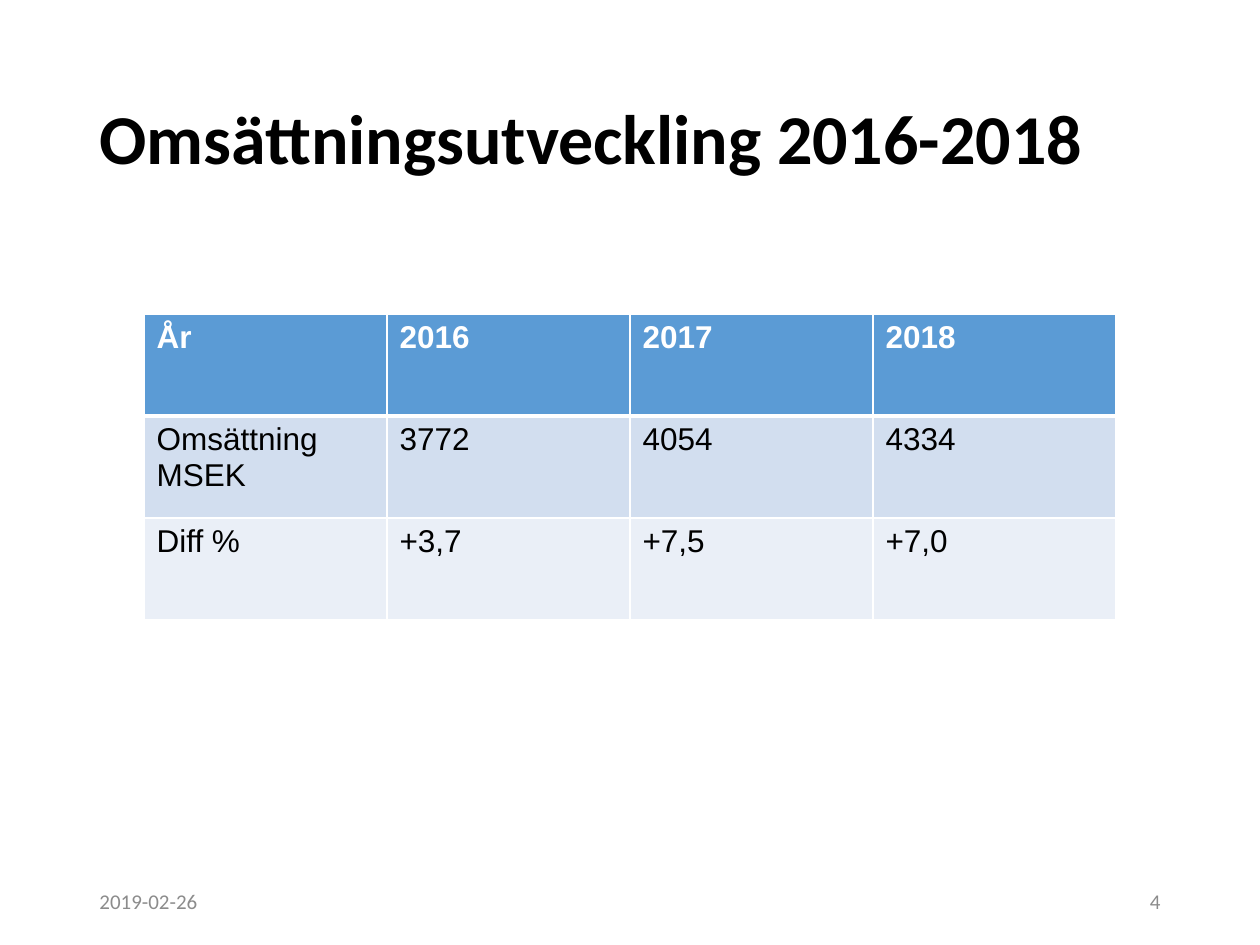
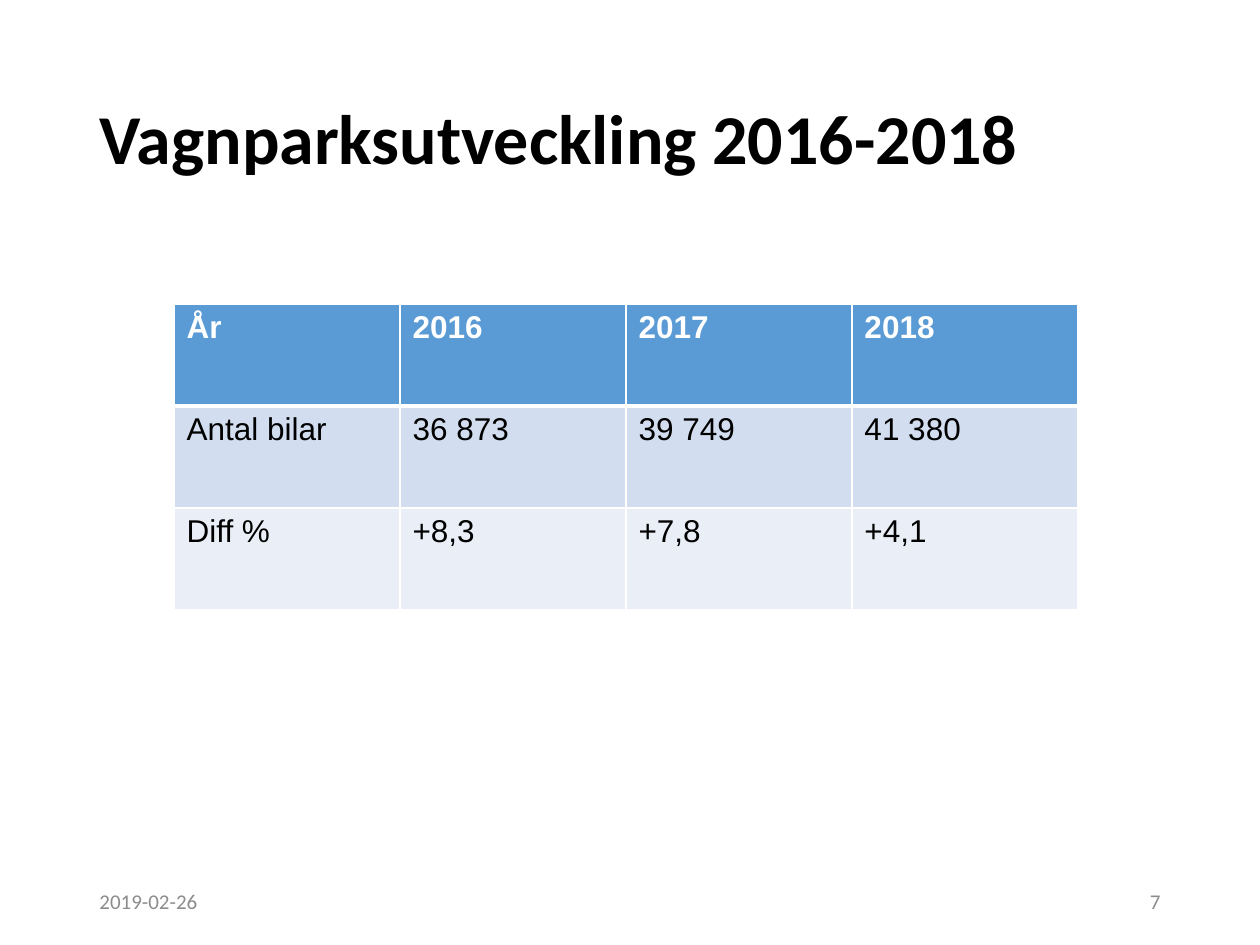
from lxml.etree import SubElement
from pptx import Presentation
from pptx.dml.color import RGBColor
from pptx.enum.text import MSO_ANCHOR as Anchor, PP_ALIGN as Align
from pptx.oxml.ns import qn
from pptx.util import Pt

# Content
DATE = "2019-02-26"
HEAD = ("År", "2016", "2017", "2018")
PAGES = [
    {
        "title": "Omsättningsutveckling 2016-2018",
        "num": "4",
        "left": 144, "top": 314, "col": 243,
        "rows": [
            HEAD,
            ("Omsättning MSEK", "3772", "4054", "4334"),
            ("Diff %", "+3,7", "+7,5", "+7,0"),
        ],
    },
    {
        "title": "Vagnparksutveckling 2016-2018",
        "num": "7",
        "left": 174, "top": 304, "col": 226,
        "rows": [
            HEAD,
            ("Antal bilar", "36 873", "39 749", "41 380"),
            ("Diff %", "+8,3", "+7,8", "+4,1"),
        ],
    },
]

# Shared look
BLACK = RGBColor(0x00, 0x00, 0x00)
WHITE = RGBColor(0xFF, 0xFF, 0xFF)
GREY = RGBColor(0x8C, 0x8C, 0x8C)
BLUE = RGBColor(0x5B, 0x9B, 0xD5)
PALE = RGBColor(0xD2, 0xDE, 0xEF)
FAINT = RGBColor(0xEA, 0xEF, 0xF7)

TITLE = {"name": "Calibri", "size": Pt(40), "bold": True, "color": BLACK}
FOOT = {"name": "Calibri", "size": Pt(12), "bold": False, "color": GREY}
TOP = {"name": "Arial", "size": Pt(18), "bold": True, "color": WHITE}
BODY = {**TOP, "bold": False, "color": BLACK}

WIDE, HIGH = 1260, 945
EDGE = 87
ROW = 102
FOOT_W = 283
FILLS = (BLUE, PALE, FAINT)
THIN, THICK = 1, 3


def px(n):
    return round(n * 914400 / 126)


def style(para, look):
    for key, value in look.items():
        if key == "color":
            para.font.color.rgb = value
        else:
            setattr(para.font, key, value)


def label(slide, box, text, look, align=Align.LEFT, space=1.0):
    frame = slide.shapes.add_textbox(*map(px, box)).text_frame
    frame.word_wrap = True
    frame.vertical_anchor = Anchor.MIDDLE
    para = frame.paragraphs[0]
    para.text = text
    para.alignment = align
    para.line_spacing = space
    style(para, look)


def border(cell, sides):
    props = cell._tc.get_or_add_tcPr()
    for side, width in sides.items():
        line = SubElement(props, qn(f"a:ln{side}"), w=str(Pt(width)))
        fill = SubElement(line, qn("a:solidFill"))
        SubElement(fill, qn("a:srgbClr"), val=str(WHITE))


def grid(slide, page):
    rows = page["rows"]
    box = (page["left"], page["top"], page["col"] * len(HEAD), ROW * len(rows))
    table = slide.shapes.add_table(len(rows), len(HEAD), *map(px, box)).table
    for col in table.columns:
        col.width = px(page["col"])
    for r, row in enumerate(rows):
        table.rows[r].height = px(ROW)
        # A thick rule parts the header from the body
        sides = {"L": THIN, "R": THIN,
                 "T": THICK if r == 1 else THIN,
                 "B": THICK if r == 0 else THIN}
        for c, text in enumerate(row):
            cell = table.cell(r, c)
            border(cell, sides)
            cell.fill.solid()
            cell.fill.fore_color.rgb = FILLS[r]
            cell.text = text
            style(cell.text_frame.paragraphs[0], BODY if r else TOP)


def main():
    deck = Presentation()
    deck.slide_width, deck.slide_height = px(WIDE), px(HIGH)
    for page in PAGES:
        slide = deck.slides.add_slide(deck.slide_layouts[6])
        label(slide, (EDGE, 50, WIDE - 2 * EDGE, 183), page["title"], TITLE,
              space=0.9)
        grid(slide, page)
        # Footer: date on the left, page number on the right
        label(slide, (EDGE, 876, FOOT_W, 50), DATE, FOOT)
        label(slide, (WIDE - EDGE - FOOT_W, 876, FOOT_W, 50), page["num"],
              FOOT, Align.RIGHT)
    deck.save("out.pptx")


if __name__ == "__main__":
    main()
